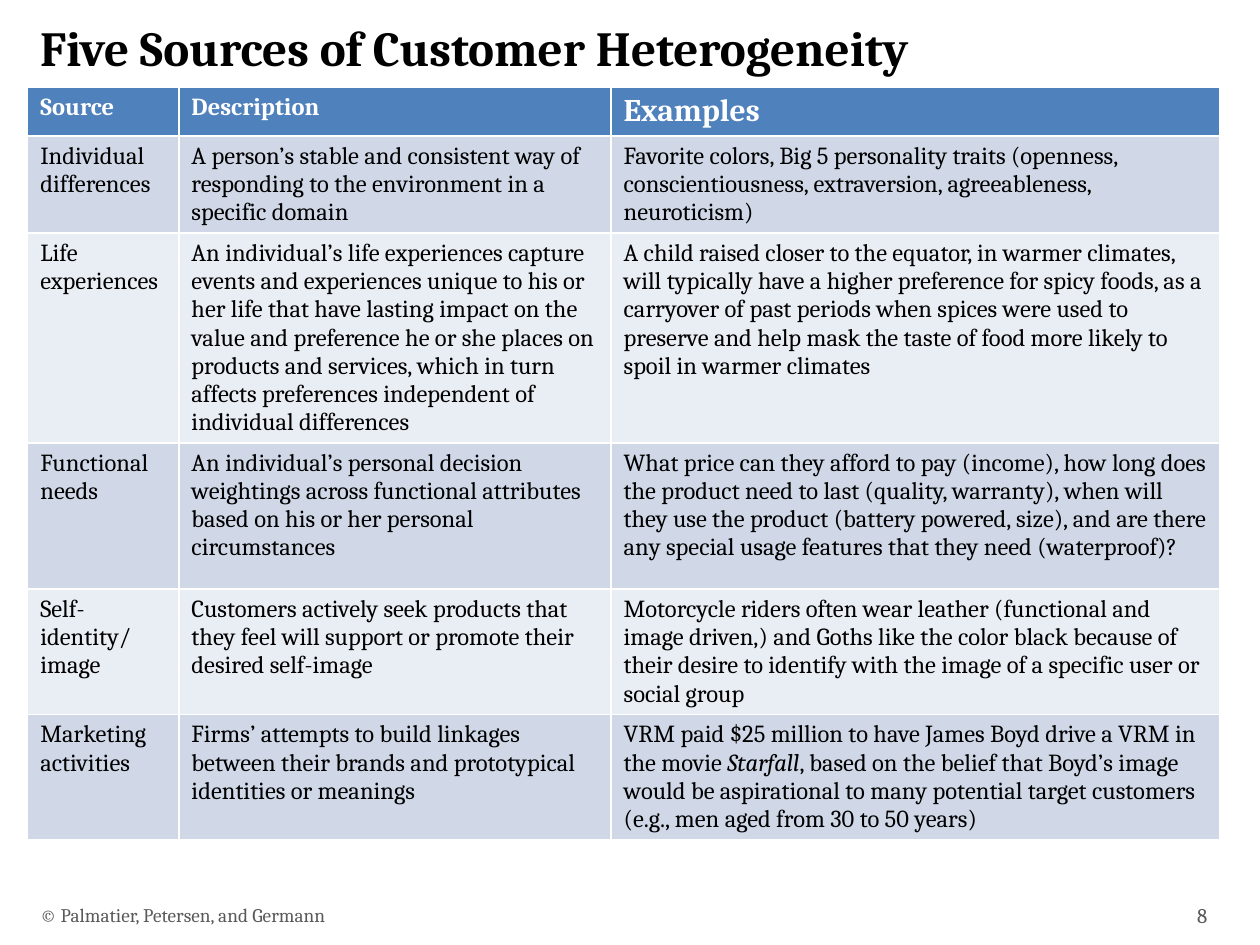
from pptx import Presentation
from pptx.dml.color import RGBColor
from pptx.enum.text import MSO_ANCHOR, PP_ALIGN
from pptx.util import Inches, Pt

FONT = "Cambria"
BLACK = RGBColor(0x00, 0x00, 0x00)
WHITE = RGBColor(0xFF, 0xFF, 0xFF)
GRAY = RGBColor(0x59, 0x59, 0x59)
HEADER_BLUE = RGBColor(0x4F, 0x81, 0xBD)
BANDS = (RGBColor(0xD0, 0xD8, 0xE8), RGBColor(0xE9, 0xED, 0xF4))

SLIDE_WIDTH, SLIDE_HEIGHT = 10, 7.5
LEFT, RIGHT = 0.22, 9.68
COLUMN_SHARES = (1.2, 3.43, 4.83)
ROW_HEIGHTS = (0.37, 0.73, 1.59, 1.16, 0.94, 0.94)

HEADERS = ("Source", "Description", "Examples")
HEADER_SIZES = (14, 14, 18)
MOVIE = "Starfall"
SOURCES = (
    ("Individual differences",
     "A person’s stable and consistent way of responding to the environment in a "
     "specific domain",
     "Favorite colors, Big 5 personality traits (openness, conscientiousness, "
     "extraversion, agreeableness, neuroticism)"),
    ("Life experiences",
     "An individual’s life experiences capture events and experiences unique to his "
     "or her life that have lasting impact on the value and preference he or she "
     "places on products and services, which in turn affects preferences independent "
     "of individual differences",
     "A child raised closer to the equator, in warmer climates, will typically have "
     "a higher preference for spicy foods, as a carryover of past periods when spices "
     "were used to preserve and help mask the taste of food more likely to spoil in "
     "warmer climates"),
    ("Functional needs",
     "An individual’s personal decision weightings across functional attributes "
     "based on his or her personal circumstances",
     "What price can they afford to pay (income), how long does the product need to "
     "last (quality, warranty), when will they use the product (battery powered, "
     "size), and are there any special usage features that they need (waterproof)?"),
    ("Self-identity/image",
     "Customers actively seek products that they feel will support or promote their "
     "desired self-image",
     "Motorcycle riders often wear leather (functional and image driven,) and Goths "
     "like the color black because of their desire to identify with the image of a "
     "specific user or social group"),
    ("Marketing activities",
     "Firms’ attempts to build linkages between their brands and prototypical "
     "identities or meanings",
     f"VRM paid $25 million to have James Boyd drive a VRM in the movie {MOVIE}, "
     "based on the belief that Boyd’s image would be aspirational to many potential "
     "target customers (e.g., men aged from 30 to 50 years)"),
)


def write(paragraph, text, size, color, bold=False):
    """Write the text as runs, with the movie title in italics."""
    before, title, after = text.partition(MOVIE)
    for part in filter(None, (before, title, after)):
        run = paragraph.add_run()
        run.text = part
        font = run.font
        font.name, font.size, font.bold = FONT, Pt(size), bold
        font.italic = part == MOVIE
        font.color.rgb = color


def add_text(slide, box, text, size, color, bold=False,
             align=PP_ALIGN.LEFT, anchor=MSO_ANCHOR.MIDDLE):
    shape = slide.shapes.add_textbox(*map(Inches, box))
    frame = shape.text_frame
    frame.word_wrap = True
    frame.vertical_anchor = anchor
    paragraph = frame.paragraphs[0]
    paragraph.alignment = align
    write(paragraph, text, size, color, bold)


def add_sources_table(slide, box):
    shape = slide.shapes.add_table(len(ROW_HEIGHTS), len(COLUMN_SHARES),
                                   *map(Inches, box))
    table = shape.table
    for column, share in zip(table.columns, COLUMN_SHARES):
        column.width = Inches(box[2] * share / sum(COLUMN_SHARES))
    for row, height in zip(table.rows, ROW_HEIGHTS):
        row.height = Inches(height)
    for row_index, texts in enumerate((HEADERS, *SOURCES)):
        is_header = row_index == 0
        fill = HEADER_BLUE if is_header else BANDS[(row_index - 1) % 2]
        for column_index, text in enumerate(texts):
            cell = table.cell(row_index, column_index)
            cell.fill.solid()
            cell.fill.fore_color.rgb = fill
            write(cell.text_frame.paragraphs[0], text,
                  HEADER_SIZES[column_index] if is_header else 14,
                  WHITE if is_header else BLACK, is_header)


def add_footer(slide, box):
    left, top, width, height = box
    number_width = 0.61
    add_text(slide, (left, top, 6.7, height),
             "© Palmatier, Petersen, and Germann", 11, GRAY)
    add_text(slide, (left + width - number_width, top, number_width, height),
             "8", 12, GRAY, align=PP_ALIGN.RIGHT)


def main():
    presentation = Presentation()
    presentation.slide_width = Inches(SLIDE_WIDTH)
    presentation.slide_height = Inches(SLIDE_HEIGHT)
    slide = presentation.slides.add_slide(presentation.slide_layouts[6])
    width = RIGHT - LEFT
    add_sources_table(slide, (LEFT, 0.69, width, sum(ROW_HEIGHTS)))
    add_footer(slide, (LEFT, 7.06, width, 0.4))
    add_text(slide, (LEFT, 0.09, 8.6, 0.57), "Five Sources of Customer Heterogeneity",
             28, BLACK, bold=True, anchor=MSO_ANCHOR.TOP)
    presentation.save("out.pptx")


if __name__ == "__main__":
    main()
